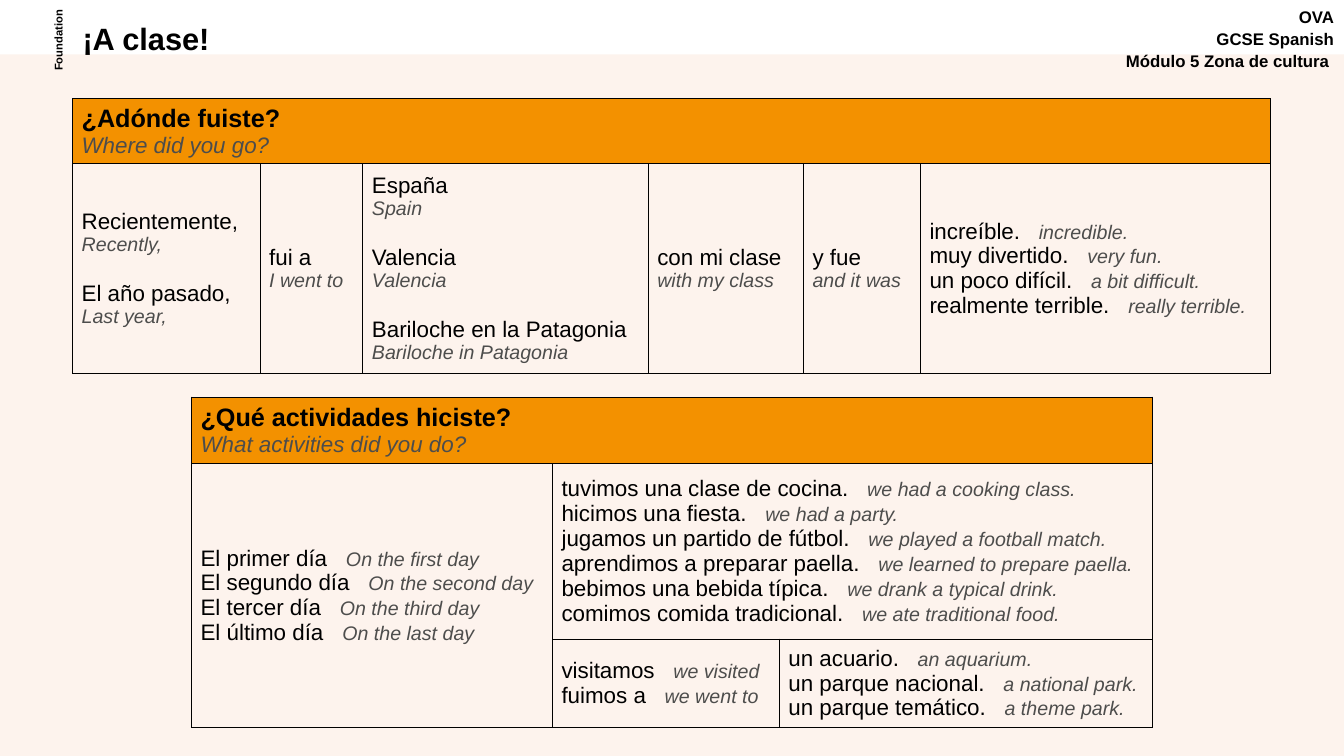
from lxml import etree
from pptx import Presentation
from pptx import util as u
from pptx.dml.color import RGBColor
from pptx.enum import shapes, text
from pptx.oxml.ns import qn

BLACK = RGBColor(0, 0, 0)
GREY = RGBColor(0x4D, 0x4D, 0x4C)
ORANGE = RGBColor(0xF3, 0x91, 0x00)
CREAM = RGBColor(0xFD, 0xF3, 0xED)

WHERE = [("¿Adónde fuiste?", "Where did you go?")]
WHEN = [("Recientemente,", "Recently,"), ("El año pasado,", "Last year,")]
PLACES = [("España", "Spain"), ("Valencia", "Valencia"),
          ("Bariloche en la Patagonia", "Bariloche in Patagonia")]
VIEWS = [("increíble.", "incredible."), ("muy divertido.", "very fun."),
         ("un poco difícil.", "a bit difficult."),
         ("realmente terrible.", "really terrible.")]
WHAT = [("¿Qué actividades hiciste?", "What activities did you do?")]
DAYS = [("El primer día", "On the first day"),
        ("El segundo día", "On the second day"),
        ("El tercer día", "On the third day"),
        ("El último día", "On the last day")]
DEEDS = [("tuvimos una clase de cocina.", "we had a cooking class."),
         ("hicimos una fiesta.", "we had a party."),
         ("jugamos un partido de fútbol.", "we played a football match."),
         ("aprendimos a preparar paella.", "we learned to prepare paella."),
         ("bebimos una bebida típica.", "we drank a typical drink."),
         ("comimos comida tradicional.", "we ate traditional food.")]
VISITS = [("visitamos", "we visited"), ("fuimos a", "we went to")]
SIGHTS = [("un acuario.", "an aquarium."),
          ("un parque nacional.", "a national park."),
          ("un parque temático.", "a theme park.")]


class Sheet:
    def __init__(self, slide):
        self.slide = slide
        self.face = "Arial"

    def style(self, font, size, color=BLACK, bold=False, slant=False):
        font.name = self.face
        font.size = u.Pt(size)
        font.color.rgb = color
        font.bold = bold
        font.italic = slant

    def band(self, x, y, w, h, color):
        rect = self.slide.shapes.add_shape(
            shapes.MSO_SHAPE.RECTANGLE, *map(u.Inches, (x, y, w, h)))
        rect.shadow.inherit = False
        rect.fill.solid()
        rect.fill.fore_color.rgb = color
        rect.line.fill.background()

    def label(self, x, y, w, h, lines, size, align=text.PP_ALIGN.LEFT, turn=0, lead=None):
        box = self.slide.shapes.add_textbox(*map(u.Inches, (x, y, w, h)))
        box.rotation = turn
        frame = box.text_frame
        frame.word_wrap = True
        frame.text = "\n".join(lines)
        for i, para in enumerate(frame.paragraphs):
            para.alignment = align
            para.line_spacing = lead
            if i:
                para.space_before = u.Pt(1.2)
            self.style(para.runs[0].font, size, bold=True)

    def grid(self, x, y, cols, rows):
        frame = self.slide.shapes.add_table(
            len(rows), len(cols), *map(u.Inches, (x, y, sum(cols), sum(rows))))
        table = frame.table
        table.first_row = table.horz_banding = False
        for col, w in zip(table.columns, cols):
            col.width = u.Inches(w)
        for row, h in zip(table.rows, rows):
            row.height = u.Inches(h)
        for cell in table.iter_cells():
            self.edge(cell)
            cell.fill.background()
            cell.vertical_anchor = text.MSO_ANCHOR.MIDDLE
            cell.margin_left = cell.margin_right = u.Inches(0.09)
            cell.margin_top = cell.margin_bottom = u.Inches(0.04)
        return table

    def edge(self, cell):
        """Draw a thin black border on all four sides."""
        props = cell._tc.get_or_add_tcPr()
        for side in "LRTB":
            line = etree.SubElement(props, qn("a:ln" + side), w=str(u.Pt(0.75)))
            fill = etree.SubElement(line, qn("a:solidFill"))
            etree.SubElement(fill, qn("a:srgbClr"), val=str(BLACK))

    def stack(self, cell, pairs, sizes=(16, 14), bold=False):
        """Set each translation on the line below its phrase."""
        cell.text_frame.text = "\n".join(line for pair in pairs for line in pair)
        for i, para in enumerate(cell.text_frame.paragraphs):
            lower = i % 2
            if i and not lower:
                para.space_before = u.Pt(17.9)
            self.style(para.runs[0].font, sizes[lower], GREY if lower else BLACK,
                       bold and not lower, bool(lower))

    def head(self, cell, pairs):
        cell.fill.solid()
        cell.fill.fore_color.rgb = ORANGE
        self.stack(cell, pairs, (18, 16), True)

    def list(self, cell, pairs):
        """Set each translation beside its phrase, after a widened space."""
        frame = cell.text_frame
        for i, (phrase, gloss) in enumerate(pairs):
            para = frame.add_paragraph() if i else frame.paragraphs[0]
            for part, size, color in ((phrase, 16, BLACK), (" ", 16, BLACK), (gloss, 14, GREY)):
                run = para.add_run()
                run.text = part
                self.style(run.font, size, color, slant=color == GREY)
                if part == " ":
                    run._r.get_or_add_rPr().set("spc", "890")


def main():
    deck = Presentation()
    deck.slide_width, deck.slide_height = u.Inches(13.33), u.Inches(7.5)
    sheet = Sheet(deck.slides.add_slide(deck.slide_layouts[6]))

    sheet.band(0, 0.54, 13.33, 6.96, CREAM)
    sheet.label(10.99, 0.02, 2.34, 0.77,
                ["OVA", "GCSE Spanish", "Módulo 5 Zona de cultura "],
                12, text.PP_ALIGN.RIGHT)
    sheet.label(0.72, 0.19, 6.88, 0.43, ["¡A clase!"], 22, lead=0.9)
    sheet.label(0.06, 0.29, 1.02, 0.22, ["Foundation"], 8, text.PP_ALIGN.CENTER, 270)

    trip = sheet.grid(0.72, 0.98, [1.86, 1.02, 2.83, 1.54, 1.16, 3.47], [0.62, 1.97])
    trip.cell(0, 0).merge(trip.cell(0, 5))
    sheet.head(trip.cell(0, 0), WHERE)
    stacks = [WHEN, [("fui a", "I went to")], PLACES,
              [("con mi clase", "with my class")], [("y fue", "and it was")]]
    for col, pairs in enumerate(stacks):
        sheet.stack(trip.cell(1, col), pairs)
    sheet.list(trip.cell(1, 5), VIEWS)

    plan = sheet.grid(1.9, 3.94, [3.58, 2.25, 3.7], [0.66, 1.74, 0.87])
    plan.cell(0, 0).merge(plan.cell(0, 2))
    plan.cell(1, 0).merge(plan.cell(2, 0))
    plan.cell(1, 1).merge(plan.cell(1, 2))
    sheet.head(plan.cell(0, 0), WHAT)
    for row, col, pairs in ((1, 0, DAYS), (1, 1, DEEDS), (2, 1, VISITS), (2, 2, SIGHTS)):
        sheet.list(plan.cell(row, col), pairs)

    deck.save("out.pptx")


if __name__ == "__main__":
    main()
